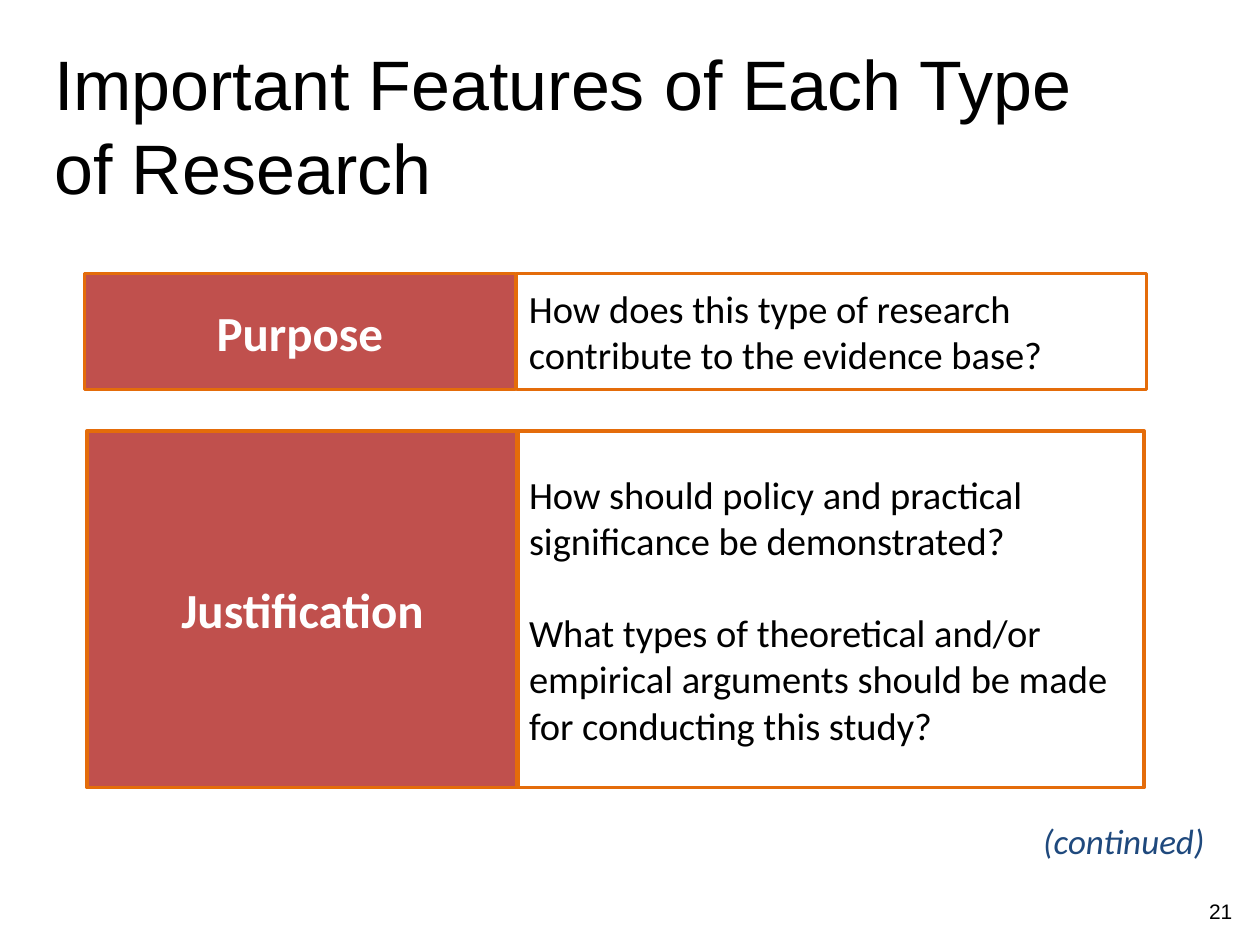
from pptx import Presentation
from pptx.dml.color import RGBColor
from pptx.enum.shapes import MSO_SHAPE
from pptx.enum.text import MSO_ANCHOR, MSO_AUTO_SIZE, PP_ALIGN
from pptx.util import Inches, Pt

RECT = MSO_SHAPE.RECTANGLE
MIDDLE, TOP = MSO_ANCHOR.MIDDLE, MSO_ANCHOR.TOP
LEFT, CENTER, RIGHT = PP_ALIGN.LEFT, PP_ALIGN.CENTER, PP_ALIGN.RIGHT
NO_AUTOFIT = MSO_AUTO_SIZE.NONE

BLACK, WHITE, NAVY = "000000", "FFFFFF", "1F497D"
RED, ORANGE = "C0504D", "E46C0A"
ANSWER_LEFT, LABEL_WIDTH = 4.1, 3.42
PARAGRAPH_GAP = 26.5

# label, label left, top, question width, height, questions
ROWS = [
    ("Purpose", 0.67, 2.17, 5, 0.92,
     ["How does this type of research contribute to the evidence base?"]),
    ("Justification", 0.69, 3.42, 4.98, 2.83,
     ["How should policy and practical significance be demonstrated?",
      "What types of theoretical and/or empirical arguments should be made "
      "for conducting this study?"]),
]


def rgb(color):
    return RGBColor.from_string(color)


def write(s, paragraphs, size, color, font="Calibri", align=LEFT,
          anchor=MIDDLE, bold=False, italic=False):
    tf = s.text_frame
    tf.word_wrap = True
    tf.auto_size = NO_AUTOFIT
    tf.vertical_anchor = anchor
    for i, text in enumerate(paragraphs):
        p = tf.add_paragraph() if i else tf.paragraphs[0]
        p.text = text
        p.alignment = align
        p.space_before = Pt(PARAGRAPH_GAP if i else 0)
        p.font.name = font
        p.font.size = Pt(size)
        p.font.bold = bold
        p.font.italic = italic
        p.font.color.rgb = rgb(color)


def add_title(slide, text):
    s = slide.shapes.title
    s.left, s.top = Inches(0.33), Inches(0.3)
    s.width, s.height = Inches(8.33), Inches(1.37)
    write(s, [text], 40, BLACK, font="Arial")


def add_box(slide, left, top, width, height, fill=None):
    s = slide.shapes.add_shape(RECT, Inches(left), Inches(top),
                               Inches(width), Inches(height))
    s.shadow.inherit = False
    if fill:
        s.fill.solid()
        s.fill.fore_color.rgb = rgb(fill)
    else:
        s.fill.background()
    s.line.color.rgb = rgb(ORANGE)
    s.line.width = Pt(2)
    return s


def add_row(slide, label, left, top, width, height, questions):
    s = add_box(slide, left, top, LABEL_WIDTH, height, RED)
    write(s, [label], 28, WHITE, align=CENTER, bold=True)
    s = add_box(slide, ANSWER_LEFT, top, width, height)
    write(s, questions, 22, BLACK)


def add_text(slide, text, left, top, width, height, size, color, **style):
    s = slide.shapes.add_textbox(Inches(left), Inches(top),
                                 Inches(width), Inches(height))
    write(s, [text], size, color, align=RIGHT, **style)


def main():
    prs = Presentation()
    prs.slide_width, prs.slide_height = Inches(10), Inches(7.5)
    slide = prs.slides.add_slide(prs.slide_layouts[5])
    add_title(slide, "Important Features of Each Type of Research")
    for row in ROWS:
        add_row(slide, *row)
    add_text(slide, "(continued)", 8.08, 6.46, 1.58, 0.42, 20, NAVY, italic=True)
    add_text(slide, "21", 9.32, 7.08, 0.56, 0.3, 12, BLACK, font="Arial", anchor=TOP)
    prs.save("out.pptx")


if __name__ == "__main__":
    main()
